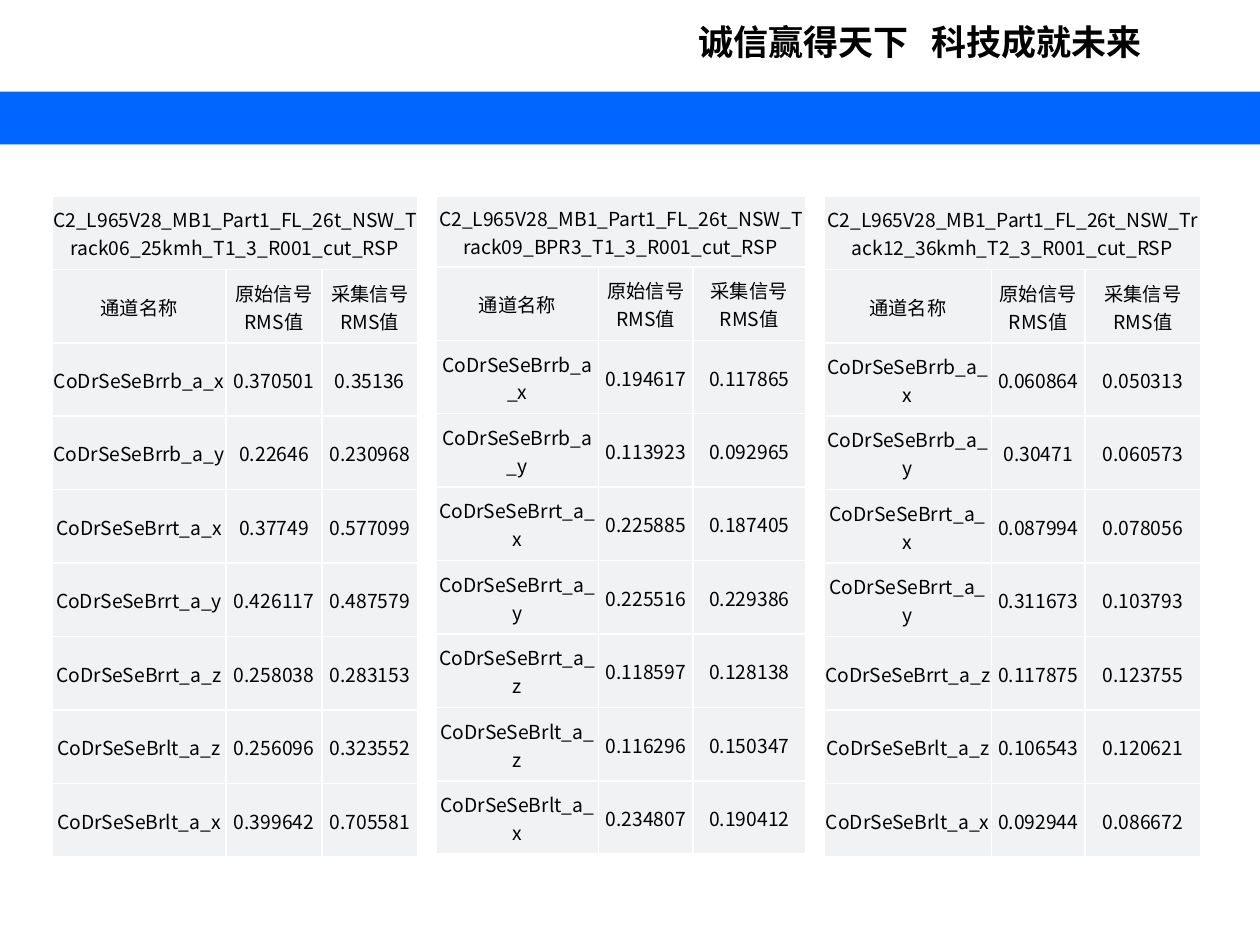
from lxml import etree
from pptx import Presentation
from pptx.dml.color import RGBColor
from pptx.enum.shapes import MSO_SHAPE
from pptx.enum.text import MSO_ANCHOR, MSO_AUTO_SIZE, PP_ALIGN
from pptx.oxml.ns import qn
from pptx.util import Cm, Pt

LEFT, CENTER = PP_ALIGN.LEFT, PP_ALIGN.CENTER
MIDDLE = MSO_ANCHOR.MIDDLE
NO_AUTOFIT = MSO_AUTO_SIZE.NONE
RECTANGLE = MSO_SHAPE.RECTANGLE
TITLE_ONLY = 5

BLACK = RGBColor(0x00, 0x00, 0x00)
WHITE = RGBColor(0xFF, 0xFF, 0xFF)
BLUE = RGBColor(0x00, 0x66, 0xFF)
PALE_GREY = RGBColor(0xF0, 0xF2, 0xF4)
FONT = "Noto Sans CJK SC"

SLIDE_WIDTH, SLIDE_HEIGHT = 25.4, 19.05
TABLE_LEFT, TABLE_TOP, TABLE_GAP = 1.05, 3.96, 0.37
ROW_HEIGHT = 1.48

HEADINGS = ("通道名称", "原始信号RMS值", "采集信号RMS值")
CHANNELS = (
    "CoDrSeSeBrrb_a_x", "CoDrSeSeBrrb_a_y", "CoDrSeSeBrrt_a_x",
    "CoDrSeSeBrrt_a_y", "CoDrSeSeBrrt_a_z", "CoDrSeSeBrlt_a_z",
    "CoDrSeSeBrlt_a_x",
)
# Track title, column widths, title row height, (original, acquired) RMS values
TRACKS = (
    ("C2_L965V28_MB1_Part1_FL_26t_NSW_Track06_25kmh_T1_3_R001_cut_RSP",
     (3.51, 1.93, 1.93), 1.47,
     (("0.370501", "0.35136"), ("0.22646", "0.230968"),
      ("0.37749", "0.577099"), ("0.426117", "0.487579"),
      ("0.258038", "0.283153"), ("0.256096", "0.323552"),
      ("0.399642", "0.705581"))),
    ("C2_L965V28_MB1_Part1_FL_26t_NSW_Track09_BPR3_T1_3_R001_cut_RSP",
     (3.28, 1.9, 2.27), 1.42,
     (("0.194617", "0.117865"), ("0.113923", "0.092965"),
      ("0.225885", "0.187405"), ("0.225516", "0.229386"),
      ("0.118597", "0.128138"), ("0.116296", "0.150347"),
      ("0.234807", "0.190412"))),
    ("C2_L965V28_MB1_Part1_FL_26t_NSW_Track12_36kmh_T2_3_R001_cut_RSP",
     (3.38, 1.88, 2.34), 1.47,
     (("0.060864", "0.050313"), ("0.30471", "0.060573"),
      ("0.087994", "0.078056"), ("0.311673", "0.103793"),
      ("0.117875", "0.123755"), ("0.106543", "0.120621"),
      ("0.092944", "0.086672"))),
)


def write_text(paragraph, text, size=11, bold=False, align=CENTER, tab_stop=None):
    paragraph.alignment = align
    if tab_stop is not None:
        tabs = etree.SubElement(paragraph._p.get_or_add_pPr(), qn("a:tabLst"))
        etree.SubElement(tabs, qn("a:tab"), pos=str(Cm(tab_stop)), algn="l")
    run = paragraph.add_run()
    run.text = text
    run.font.size = Pt(size)
    run.font.bold = bold
    run.font.color.rgb = BLACK
    run.font.name = FONT
    etree.SubElement(run._r.get_or_add_rPr(), qn("a:ea"), typeface=FONT)


def add_borders(cell, color, width):
    properties = cell._tc.get_or_add_tcPr()
    for side in ("lnL", "lnR", "lnT", "lnB"):
        line = etree.SubElement(properties, qn(f"a:{side}"), w=str(Pt(width)))
        fill = etree.SubElement(line, qn("a:solidFill"))
        etree.SubElement(fill, qn("a:srgbClr"), val=str(color))


def format_cell(cell):
    add_borders(cell, WHITE, 1)
    cell.fill.solid()
    cell.fill.fore_color.rgb = PALE_GREY
    cell.vertical_anchor = MIDDLE
    cell.margin_left = cell.margin_right = cell.margin_top = Cm(0.02)
    cell.margin_bottom = 0


def add_header(slide, left, top, width):
    """Place the slogan and, below it, the blue band across the box."""
    title = slide.shapes.title
    title.left, title.top = Cm(left + 13.82), Cm(top + 0.3)
    title.width, title.height = Cm(10.13), Cm(1.07)
    frame = title.text_frame
    frame.auto_size = NO_AUTOFIT
    frame.word_wrap = False
    frame.vertical_anchor = MIDDLE
    write_text(frame.paragraphs[0], "诚信赢得天下\t科技成就未来", size=20,
               bold=True, align=LEFT, tab_stop=4.7)

    band = slide.shapes.add_shape(
        RECTANGLE, Cm(left), Cm(top + 1.85), Cm(width), Cm(1.06))
    band.shadow.inherit = False
    band.fill.solid()
    band.fill.fore_color.rgb = BLUE
    band.line.fill.background()


def add_track_table(slide, left, top, track, widths, title_height, values):
    rows = [(track, "", ""), HEADINGS]
    rows += [(channel, *pair) for channel, pair in zip(CHANNELS, values)]
    heights = [title_height] + [ROW_HEIGHT] * (len(rows) - 1)
    table = slide.shapes.add_table(
        len(rows), len(widths), Cm(left), Cm(top),
        Cm(sum(widths)), Cm(sum(heights))).table
    table.first_row = table.horz_banding = False
    for column, width in zip(table.columns, widths):
        column.width = Cm(width)
    for row, height, texts in zip(table.rows, heights, rows):
        row.height = Cm(height)
        for cell, text in zip(row.cells, texts):
            format_cell(cell)
            if text:
                write_text(cell.text_frame.paragraphs[0], text)
    table.cell(0, 0).merge(table.cell(0, len(widths) - 1))


def main():
    presentation = Presentation()
    presentation.slide_width = Cm(SLIDE_WIDTH)
    presentation.slide_height = Cm(SLIDE_HEIGHT)
    slide = presentation.slides.add_slide(presentation.slide_layouts[TITLE_ONLY])
    add_header(slide, 0, 0, SLIDE_WIDTH)
    left = TABLE_LEFT
    for track, widths, title_height, values in TRACKS:
        add_track_table(slide, left, TABLE_TOP, track, widths, title_height, values)
        left += sum(widths) + TABLE_GAP
    presentation.save("out.pptx")


if __name__ == "__main__":
    main()
